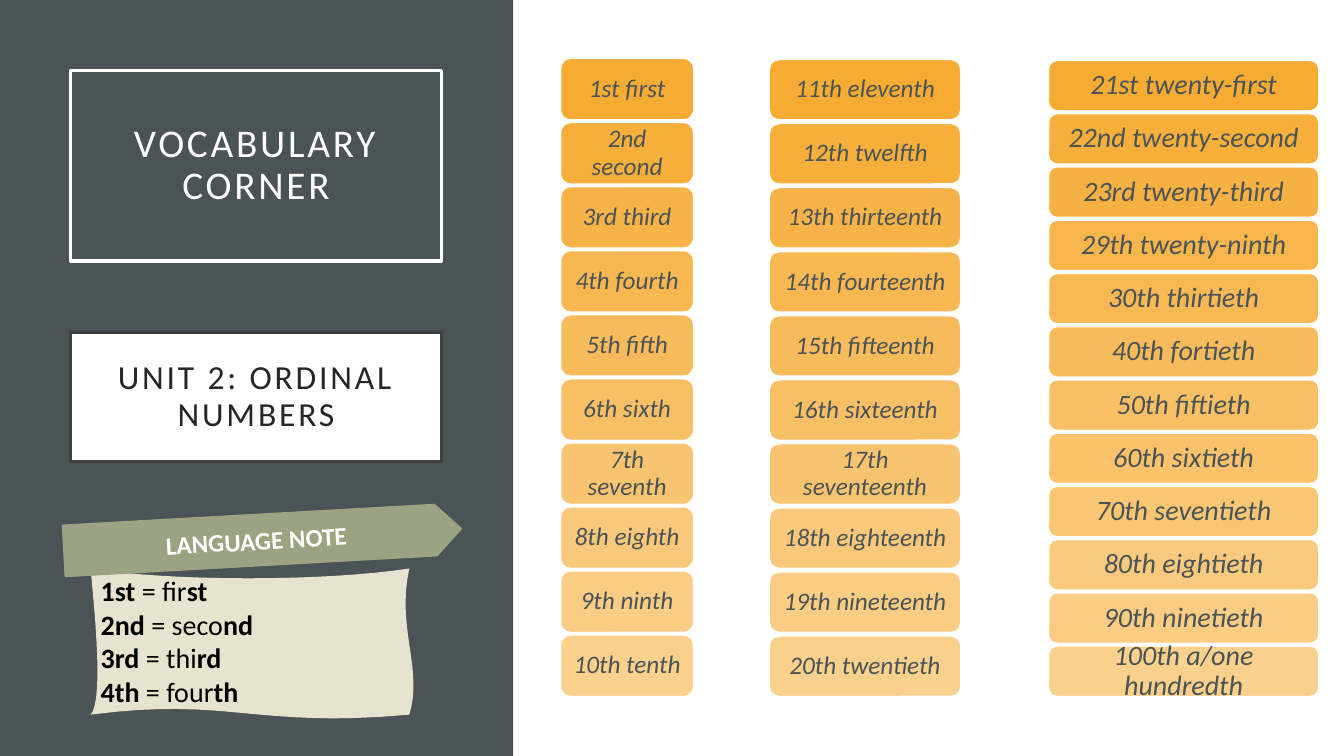
"""Build the vocabulary slide on ordinal numbers."""
from dataclasses import dataclass

from lxml.etree import SubElement
from pptx import Presentation
from pptx.dml.color import RGBColor
from pptx.enum.shapes import MSO_SHAPE
from pptx.enum.text import MSO_ANCHOR, PP_ALIGN
from pptx.oxml.ns import qn
from pptx.shapes.autoshape import Shape
from pptx.slide import Slide
from pptx.util import Inches, Pt

COLORS = {
    "slate": "4A5356", "white": "FFFFFF", "frame": "404040", "ink": "262626",
    "amber": "F6A21D", "sand": "E8E3CE", "sage": "9CA383", "black": "000000",
}
FONT = "Calibri"
BOTTOM = 6.91


@dataclass
class Column:
    left: float
    top: float
    width: float
    height: float
    size: int
    words: list[str]


@dataclass
class Panel:
    box: tuple[float, float, float, float]
    text: str
    size: int
    color: str
    fill: str | None
    line: str


COLUMNS = [
    Column(5.56, 0.58, 1.32, 0.61, 18, [
        "1st first", "2nd second", "3rd third", "4th fourth", "5th fifth",
        "6th sixth", "7th seventh", "8th eighth", "9th ninth", "10th tenth"]),
    Column(7.63, 0.59, 1.9, 0.6, 18, [
        "11th eleventh", "12th twelfth", "13th thirteenth", "14th fourteenth",
        "15th fifteenth", "16th sixteenth", "17th seventeenth",
        "18th eighteenth", "19th nineteenth", "20th twentieth"]),
    Column(10.4, 0.6, 2.68, 0.5, 20, [
        "21st twenty-first", "22nd twenty-second", "23rd twenty-third",
        "29th twenty-ninth", "30th thirtieth", "40th fortieth",
        "50th fiftieth", "60th sixtieth", "70th seventieth",
        "80th eightieth", "90th ninetieth", "100th a/one hundredth"]),
]
PANELS = [
    Panel((0.7, 0.7, 3.68, 1.89), "VOCABULARY CORNER", 28, "white", None, "white"),
    Panel((0.7, 3.3, 3.68, 1.28), "UNIT 2: ORDINAL NUMBERS", 24, "ink", "white", "frame"),
]
NOTES = [("1st ", "= fir", "st"), ("2nd ", "= seco", "nd"),
         ("3rd ", "= thi", "rd"), ("4th ", "= four", "th")]
START = (0.9, 5.64)
CURVES = [
    [(1.69, 5.77), (3.22, 5.77), (4.06, 5.64)],
    [(3.93, 6.23), (4.2, 6.64), (4.06, 7.09)],
    [(2.52, 7.23), (2.28, 6.91), (0.9, 7.09)],
    [(1.04, 6.93), (0.92, 5.91), START],
]


def rgb(name: str) -> RGBColor:
    return RGBColor.from_string(COLORS[name])


def paint(shape: Shape, fill: str | None = None, line: str | None = None,
          width: float = 1, alpha: float = 100) -> None:
    shape.shadow.inherit = False
    if fill:
        shape.fill.solid()
        shape.fill.fore_color.rgb = rgb(fill)
        if alpha < 100:
            tint = shape.fill._xPr.find(qn("a:solidFill"))[0]
            SubElement(tint, qn("a:alpha")).set("val", str(round(alpha * 1000)))
    else:
        shape.fill.background()
    if line:
        shape.line.color.rgb = rgb(line)
        shape.line.width = Pt(width)
    else:
        shape.line.fill.background()


def write(shape: Shape, lines: list[list[tuple[str, bool]]], *, size: int,
          color: str, italic: bool = False, track: int = 0,
          align: PP_ALIGN = PP_ALIGN.CENTER,
          anchor: MSO_ANCHOR = MSO_ANCHOR.MIDDLE,
          inset: tuple[float, float] = (0.1, 0.05), space: float = 1) -> None:
    frame = shape.text_frame
    frame.word_wrap = True
    frame.vertical_anchor = anchor
    frame.margin_left = frame.margin_right = Inches(inset[0])
    frame.margin_top = frame.margin_bottom = Inches(inset[1])
    for i, parts in enumerate(lines):
        para = frame.add_paragraph() if i else frame.paragraphs[0]
        para.alignment = align
        para.line_spacing = space
        for text, bold in parts:
            run = para.add_run()
            run.text = text
            font = run.font
            font.name, font.size = FONT, Pt(size)
            font.bold, font.italic = bold, italic
            font.color.rgb = rgb(color)
            if track:
                run._r.get_or_add_rPr().set("spc", str(track * 100))


def add(slide: Slide, kind: MSO_SHAPE,
        box: tuple[float, float, float, float]) -> Shape:
    return slide.shapes.add_shape(kind, *map(Inches, box))


def draw_panel(slide: Slide, panel: Panel) -> None:
    shape = add(slide, MSO_SHAPE.RECTANGLE, panel.box)
    paint(shape, panel.fill, panel.line, 2.5)
    write(shape, [[(panel.text, False)]], size=panel.size, color=panel.color,
          track=2, inset=(0.2, 0.2), space=0.9)


def draw_column(slide: Slide, col: Column) -> None:
    last = len(col.words) - 1
    step = (BOTTOM - col.height - col.top) / last
    for i, word in enumerate(col.words):
        pill = add(slide, MSO_SHAPE.ROUNDED_RECTANGLE,
                   (col.left, col.top + i * step, col.width, col.height))
        paint(pill, "amber", "white", alpha=90 - 40 * i / last)
        write(pill, [[(word, False)]], size=col.size, color="slate",
              italic=True, inset=(0.07, 0.04), space=0.9)


def trace(count: int = 16) -> list[tuple[int, int]]:
    points, a = [START], START
    for b, c, d in CURVES:
        for k in range(1, count + 1):
            t = k / count
            u = 1 - t
            points.append(tuple(
                u**3 * p + 3 * u * u * t * q + 3 * u * t * t * r + t**3 * s
                for p, q, r, s in zip(a, b, c, d)))
        a = d
    return [(Inches(x), Inches(y)) for x, y in points]


def draw_note(slide: Slide) -> None:
    first, *rest = trace()
    pen = slide.shapes.build_freeform(*first)
    pen.add_line_segments(rest, close=True)
    paper = pen.convert_to_shape()
    paint(paper, "sand")
    write(paper, [[(num, True), (stem, False), (end, True)] for num, stem, end in NOTES],
          size=20, color="black", align=PP_ALIGN.LEFT, anchor=MSO_ANCHOR.TOP)
    banner = add(slide, MSO_SHAPE.PENTAGON, (0.63, 5.1, 3.95, 0.51))
    banner.rotation = 356.8
    paint(banner, "sage", "sage")
    write(banner, [[("LANGUAGE NOTE", True)]], size=18, color="white")


def main() -> None:
    deck = Presentation()
    deck.slide_width, deck.slide_height = Inches(13.33), Inches(7.5)
    slide = deck.slides.add_slide(deck.slide_layouts[6])
    paint(add(slide, MSO_SHAPE.RECTANGLE, (0, 0, 5.09, 7.5)), "slate")
    for panel in PANELS:
        draw_panel(slide, panel)
    for col in COLUMNS:
        draw_column(slide, col)
    draw_note(slide)
    deck.save("out.pptx")


if __name__ == "__main__":
    main()
